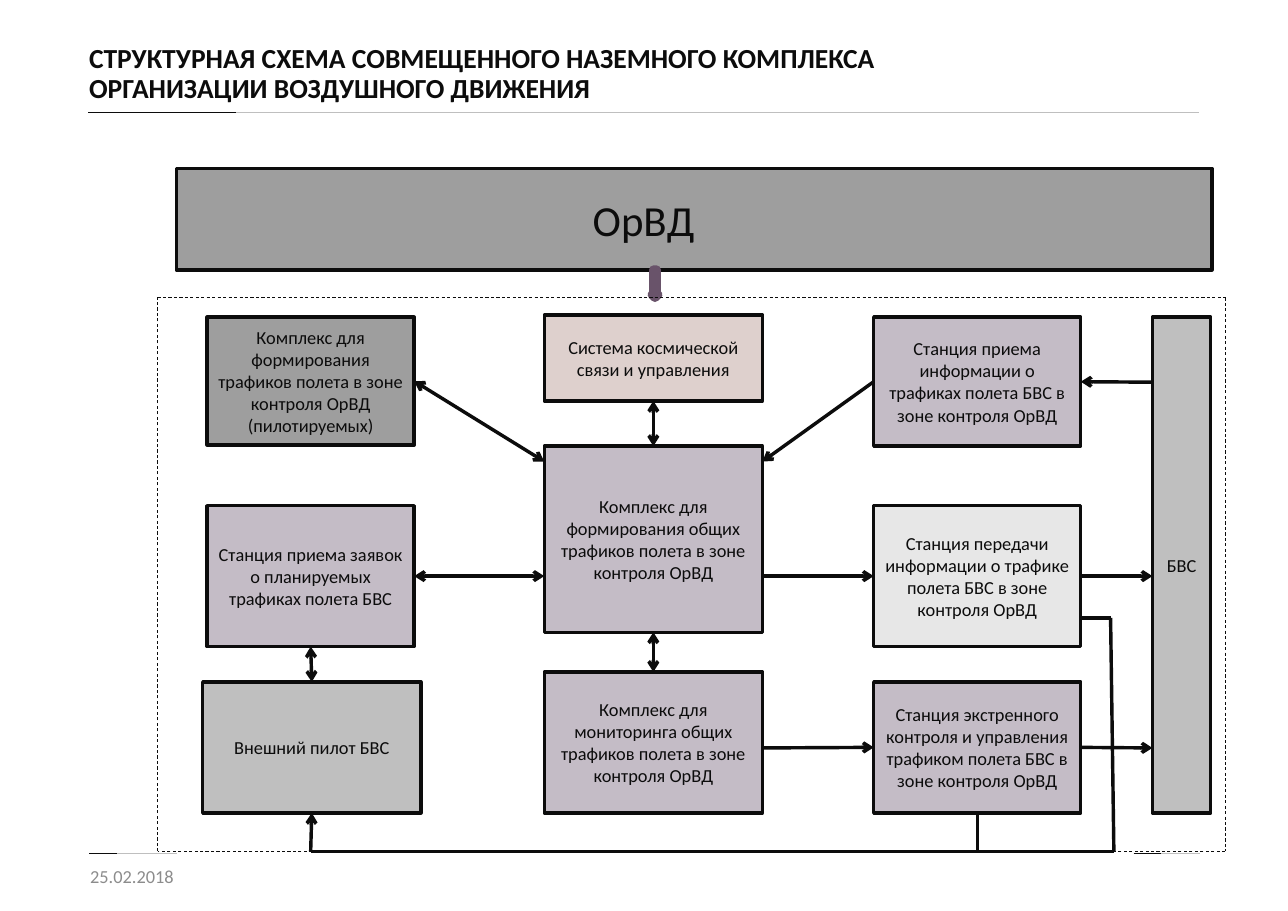
from dataclasses import dataclass

from lxml.etree import SubElement
from pptx import Presentation
from pptx.dml.color import RGBColor
from pptx.enum.dml import MSO_LINE
from pptx.enum.shapes import MSO_CONNECTOR, MSO_SHAPE
from pptx.enum.text import MSO_ANCHOR, PP_ALIGN
from pptx.oxml.ns import qn
from pptx.util import Inches, Pt


@dataclass(frozen=True)
class Theme:
    """Colours, font and sizes of the slide."""
    font: str = "Calibri"
    ink: str = "0C0C0C"
    muted: str = "8C8C8C"
    silver: str = "BFBFBF"
    grey: str = "9E9E9E"
    lilac: str = "C4BCC6"
    pale: str = "E7E7E7"
    rose: str = "DED0CD"
    plum: str = "69536A"
    title: int = 18
    banner: int = 28
    body: int = 12
    thick: float = 2.25
    thin: float = 0.5


T = Theme()
TOP, LEFT, BOTTOM, RIGHT = range(4)


def style_text(sp, text, size, color=T.ink, align=PP_ALIGN.LEFT, bold=False):
    """Write one wrapped, vertically centred paragraph and return it."""
    tf = sp.text_frame
    tf.word_wrap = True
    tf.vertical_anchor = MSO_ANCHOR.MIDDLE
    tf.text = text
    p = tf.paragraphs[0]
    p.alignment = align
    font = p.runs[0].font
    font.name, font.size, font.bold = T.font, Pt(size), bold
    font.color.rgb = RGBColor.from_string(color)
    return p


def add_block(s, box, fill, shape=MSO_SHAPE.RECTANGLE, line=T.ink, width=T.thick):
    """Add a filled and outlined shape."""
    sp = s.shapes.add_shape(shape, *map(Inches, box))
    sp.shadow.inherit = False
    sp.fill.solid()
    sp.fill.fore_color.rgb = RGBColor.from_string(fill)
    sp.line.color.rgb = RGBColor.from_string(line)
    sp.line.width = Pt(width)
    return sp


def add_line(s, start, end, color=T.ink, width=T.thick, heads="", dash=None):
    """Join two ends, each a point in inches or a (shape, site) pair."""
    line = s.shapes.add_connector(MSO_CONNECTOR.STRAIGHT, 0, 0, 0, 0)
    if isinstance(start[0], (int, float)):
        line.begin_x, line.begin_y = map(Inches, start)
    else:
        line.begin_connect(*start)
    if isinstance(end[0], (int, float)):
        line.end_x, line.end_y = map(Inches, end)
    else:
        line.end_connect(*end)
    line.line.color.rgb = RGBColor.from_string(color)
    line.line.width = Pt(width)
    if dash:
        line.line.dash_style = dash
    ln = line.line._get_or_add_ln()
    for tag in heads.split():
        SubElement(ln, qn(f"a:{tag}"), type="arrow")
    SubElement(line._element.spPr, qn("a:effectLst"))


def draw_rule(s, left, top, width, accent):
    """Draw a pale rule with a dark beginning."""
    for length, color in ((width, T.silver), (accent, T.ink)):
        add_line(s, (left, top), (left + length, top), color, T.thin)


def draw_header(s, box):
    """Draw the title and the rule below it."""
    x, y, w, h = box
    sp = s.shapes.add_textbox(*map(Inches, (x - 0.09, y, 7.97, h)))
    p = style_text(sp, "СТРУКТУРНАЯ СХЕМА СОВМЕЩЕННОГО НАЗЕМНОГО КОМПЛЕКСА "
                   "ОРГАНИЗАЦИИ ВОЗДУШНОГО ДВИЖЕНИЯ", T.title, bold=True)
    p.line_spacing = 0.9
    draw_rule(s, x, y + 0.74, w, 1.34)


def draw_footer(s, box):
    """Draw the date and the two short rules."""
    x, y, w, h = box
    draw_rule(s, x + w - 0.6, y, 0.6, 0.25)
    draw_rule(s, x, y, 0.8, 0.25)
    sp = s.shapes.add_textbox(*map(Inches, (x - 0.09, y - 0.02, 2.63, h)))
    style_text(sp, "25.02.2018", T.body, T.muted)


def draw_banner(s, box):
    """Draw the top bar with the arrow leading down from it."""
    x, y, w, h = box
    sp = add_block(s, box, T.grey)
    style_text(sp, "ОрВД", T.banner)
    sp.text_frame.margin_left = Inches(3.78)
    add_block(s, (x + 4.32, y + h, 0.05, 0.25), T.ink,
              MSO_SHAPE.DOWN_ARROW, T.plum, 6)


def draw_diagram(s, box):
    """Draw the dashed frame, the blocks and the links between them."""
    x, y, w, h = box

    def at(dx, dy):
        return x + dx, y + dy

    def block(dx, dy, bw, bh, fill, text):
        sp = add_block(s, (*at(dx, dy), bw, bh), fill)
        style_text(sp, text, T.body, align=PP_ALIGN.CENTER)
        return sp

    corners = [at(0, 0), at(w, 0), at(w, h), at(0, h)]
    for start, end in zip(corners, corners[1:] + corners[:1]):
        add_line(s, start, end, width=T.thin, dash=MSO_LINE.DASH)

    col1, col2, col3 = 0.45, 3.51, 6.5
    row1, row2, row3 = 0.18, 1.89, 3.49
    side, mid = 1.88, 1.98
    manned = block(col1, row1, side, 1.16, T.grey,
                   "Комплекс для формирования трафиков полета в зоне "
                   "контроля ОрВД (пилотируемых)")
    requests = block(col1, row2, side, 1.28, T.lilac,
                     "Станция приема заявок о планируемых трафиках полета БВС")
    pilot = block(col1 - 0.04, row3, mid, 1.19, T.silver, "Внешний пилот БВС")
    space = block(col2, row1 - 0.02, mid, 0.78, T.rose,
                  "Система космической связи и управления")
    common = block(col2, 1.35, mid, 1.69, T.lilac,
                   "Комплекс для формирования общих трафиков полета в зоне "
                   "контроля ОрВД")
    monitor = block(col2, 3.4, mid, 1.28, T.lilac,
                    "Комплекс для мониторинга общих трафиков полета в зоне "
                    "контроля ОрВД")
    receiver = block(col3, row1, side, 1.17, T.lilac,
                     "Станция приема информации о трафиках полета БВС в зоне "
                     "контроля ОрВД")
    sender = block(col3, row2, side, 1.28, T.pale,
                   "Станция передачи информации о трафике полета БВС в зоне "
                   "контроля ОрВД")
    emergency = block(col3, row3, side, 1.19, T.lilac,
                      "Станция экстренного контроля и управления трафиком "
                      "полета БВС в зоне контроля ОрВД")
    drone_x = 9.03
    block(drone_x, row1, 0.53, 4.5, T.silver, "БВС")

    both, forward = "headEnd tailEnd", "tailEnd"
    mid_end, side_end = col2 + mid, col3 + side
    level1, level2, level3 = 0.77, 2.53, 4.09
    bus_left, bus_drop, bus_right = 1.39, 7.44, 8.68
    links = (
        ((manned, RIGHT), at(col2, 1.49), both),
        ((requests, RIGHT), at(col2, level2), both),
        ((requests, BOTTOM), (pilot, TOP), both),
        ((space, BOTTOM), (common, TOP), both),
        ((common, BOTTOM), (monitor, TOP), both),
        ((receiver, LEFT), at(mid_end, 1.49), forward),
        (at(mid_end, level2), (sender, LEFT), forward),
        (at(mid_end, level3), (emergency, LEFT), forward),
        (at(drone_x, level1), (receiver, RIGHT), forward),
        ((sender, RIGHT), at(drone_x, level2), forward),
        ((emergency, RIGHT), at(drone_x, level3), forward),
        ((emergency, BOTTOM), at(bus_drop, h), ""),
        (at(side_end, 2.91), at(8.65, 2.91), ""),
        (at(8.65, 2.91), at(bus_right, h), ""),
        (at(bus_right, h), at(bus_drop, h), ""),
        (at(bus_drop, h), at(bus_left, h), ""),
        (at(bus_left, h), (pilot, BOTTOM), forward),
    )
    for start, end, heads in links:
        add_line(s, start, end, heads=heads)


def main():
    """Build the slide and save it."""
    prs = Presentation()
    prs.slide_width, prs.slide_height = Inches(11.69), Inches(8.27)
    s = prs.slides.add_slide(prs.slide_layouts[6])
    draw_header(s, (0.8, 0.28, 10.08, 0.8))
    draw_footer(s, (0.81, 7.75, 10.08, 0.44))
    draw_banner(s, (1.6, 1.53, 9.4, 0.92))
    draw_diagram(s, (1.43, 2.7, 9.69, 5.03))
    prs.save("out.pptx")


if __name__ == "__main__":
    main()
